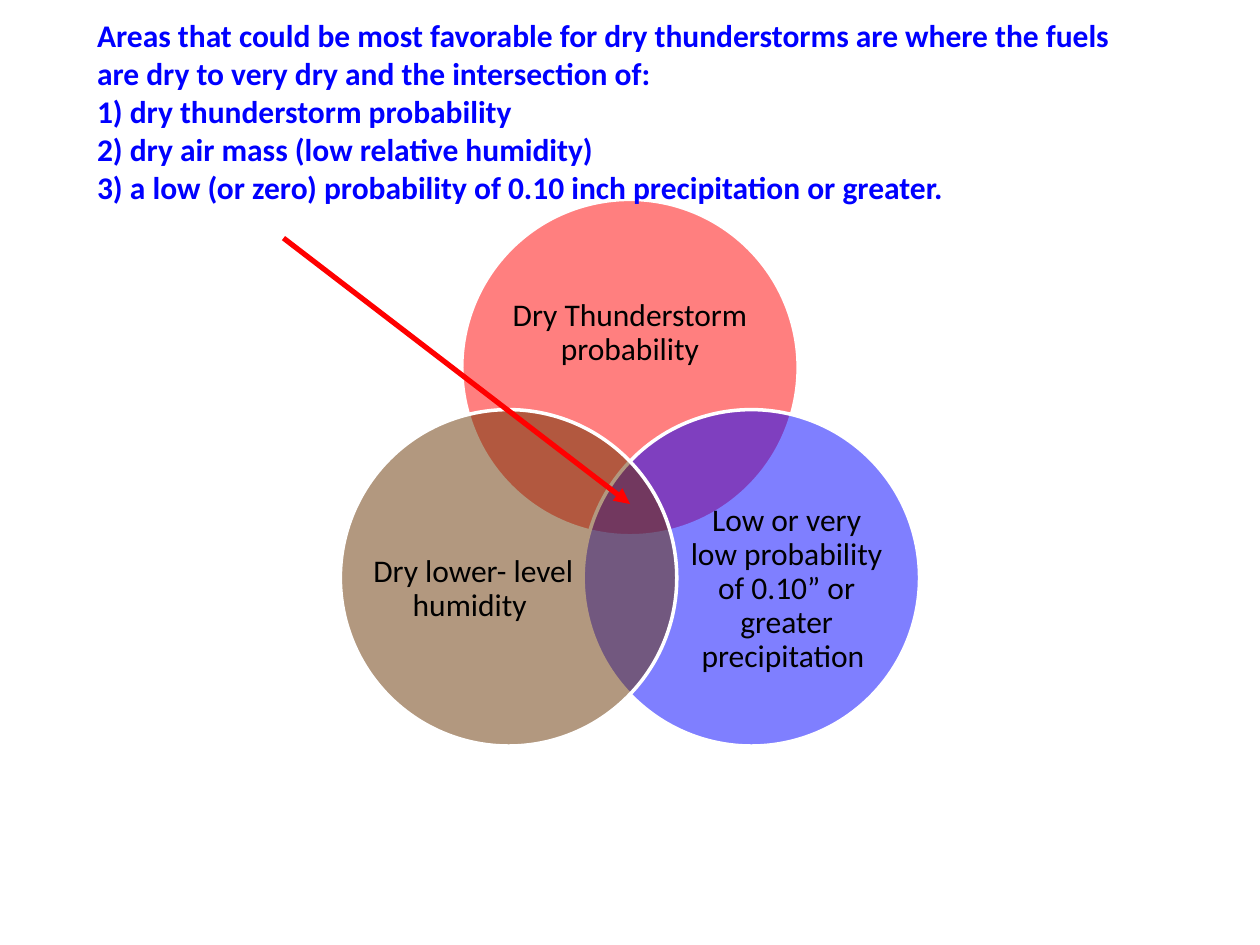
from math import cos, radians, sin

from lxml.etree import SubElement
from pptx import Presentation
from pptx.dml.color import RGBColor
from pptx.enum.shapes import MSO_CONNECTOR, MSO_SHAPE
from pptx.enum.text import MSO_ANCHOR, MSO_AUTO_SIZE, PP_ALIGN
from pptx.oxml.ns import qn
from pptx.util import Inches, Pt

RED = RGBColor(0xFF, 0x00, 0x00)
BLUE = RGBColor(0x00, 0x00, 0xFF)
BROWN = RGBColor(0x66, 0x33, 0x00)
WHITE = RGBColor(0xFF, 0xFF, 0xFF)
BLACK = RGBColor(0x00, 0x00, 0x00)

DIAMETER = 2.67
VENN_X, VENN_Y = 5, 4.03
VENN_RADIUS = DIAMETER / 2.4

INTRO = [
    "Areas that could be most favorable for dry thunderstorms are where the "
    "fuels are dry to very dry and the intersection of:",
    "1) dry thunderstorm probability",
    "2) dry air mass (low relative humidity)",
    "3) a low (or zero) probability of 0.10 inch precipitation or greater.",
]

# angle, colour, label, label offset from the circle's centre, label size
CONDITIONS = [
    (-90, RED, "Dry Thunderstorm probability", (0, -0.27), (1.96, 1.2)),
    (30, BLUE, "Low or very low probability of 0.10” or greater precipitation ",
     (0.28, 0.09), (1.6, 1.47)),
    (150, BROWN, "Dry lower- level humidity ", (-0.28, 0.09), (1.6, 1.47)),
]


def centred_box(x, y, width, height):
    return [Inches(v) for v in (x - width / 2, y - height / 2, width, height)]


def apply_format(target, values):
    for name, value in values.items():
        setattr(target, name, value)


prs = Presentation()
apply_format(prs, {"slide_width": Inches(10), "slide_height": Inches(7.5)})
slide = prs.slides.add_slide(prs.slide_layouts[5])
shapes = slide.shapes

# Venn diagram
for angle, colour, wording, (shift_x, shift_y), label_size in CONDITIONS:
    x = VENN_X + VENN_RADIUS * cos(radians(angle))
    y = VENN_Y + VENN_RADIUS * sin(radians(angle))
    circle = shapes.add_shape(MSO_SHAPE.OVAL, *centred_box(x, y, DIAMETER, DIAMETER))
    circle.shadow.inherit = False
    circle.fill.solid()
    circle.fill.fore_color.rgb = colour
    fill_colour = circle.fill._xPr.find(qn("a:solidFill"))[0]
    SubElement(fill_colour, qn("a:alpha"), val="50000")
    circle.line.color.rgb = WHITE
    circle.line.width = Pt(2)

    label = shapes.add_textbox(*centred_box(x + shift_x, y + shift_y, *label_size)).text_frame
    apply_format(label, {
        "word_wrap": True, "vertical_anchor": MSO_ANCHOR.MIDDLE,
        "margin_left": 0, "margin_right": 0, "margin_top": 0, "margin_bottom": 0,
        "text": wording,
    })
    caption = label.paragraphs[0]
    apply_format(caption, {"alignment": PP_ALIGN.CENTER, "line_spacing": 0.9})
    apply_format(caption.font, {"name": "Calibri", "size": Pt(18)})
    caption.font.color.rgb = BLACK

# Introduction, in front of the circles
intro = shapes.title
apply_format(intro, {
    "left": Inches(0.67), "top": Inches(0.08),
    "width": Inches(8.42), "height": Inches(1.62),
})
apply_format(intro.text_frame, {
    "text": "\n".join(INTRO), "word_wrap": True,
    "vertical_anchor": MSO_ANCHOR.TOP, "auto_size": MSO_AUTO_SIZE.NONE,
})
for line in intro.text_frame.paragraphs:
    line.alignment = PP_ALIGN.LEFT
    apply_format(line.font, {"name": "Calibri", "size": Pt(18), "bold": True})
    line.font.color.rgb = BLUE
shapes._spTree.append(intro._element)

# Arrow to the area where all three conditions meet
pointer = shapes.add_connector(
    MSO_CONNECTOR.STRAIGHT, Inches(2.25), Inches(1.89), Inches(5), Inches(4))
pointer.line.color.rgb = RED
pointer.line.width = Pt(3)
SubElement(pointer.line._get_or_add_ln(), qn("a:tailEnd"), type="triangle")
SubElement(pointer._element.spPr, qn("a:effectLst"))

prs.save("out.pptx")
